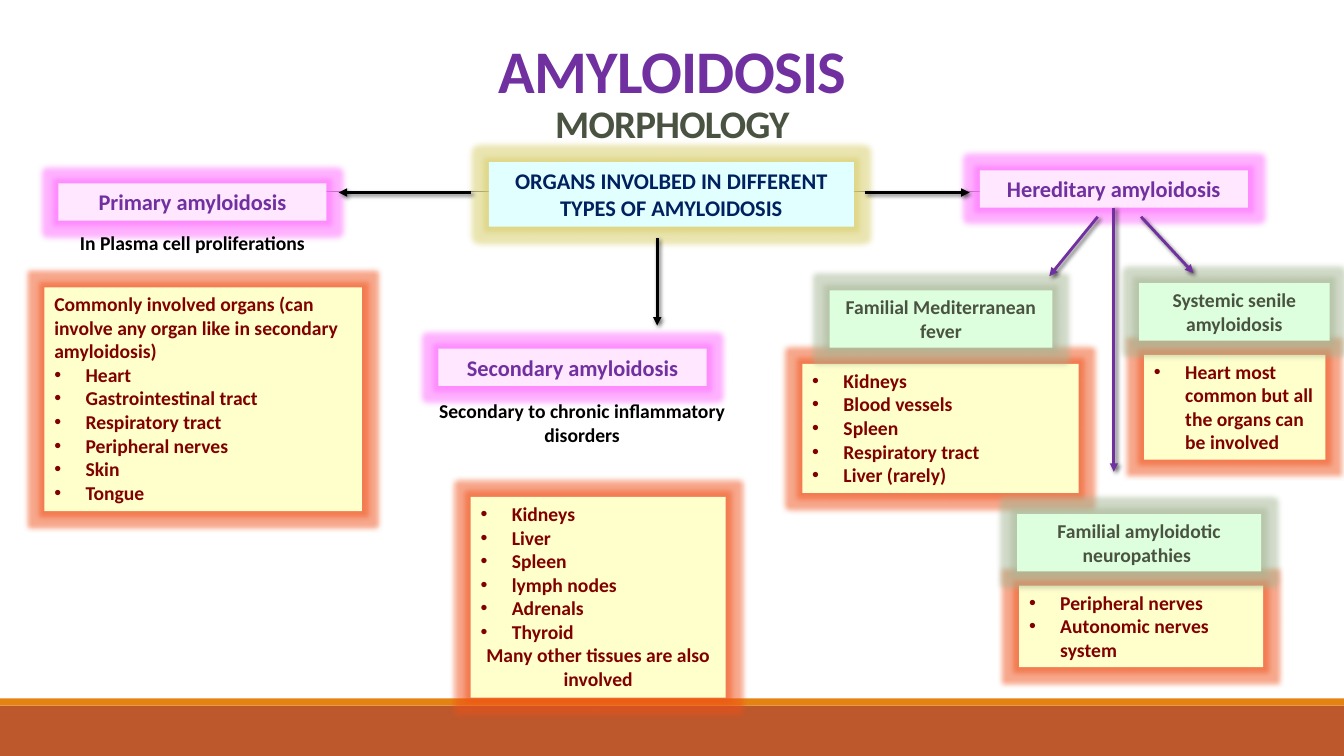
import lxml.etree
import pptx
import pptx.dml.color
import pptx.enum.shapes
import pptx.enum.text
import pptx.oxml.ns
import pptx.util

GRID = pptx.util.Inches(0.1)
COLUMNS, ROWS = 133.33, 75
FONT = "Calibri"
BLACK, PURPLE, MAROON, MOSS, NAVY = "000000", "7030A0", "800000", "4A5242", "002060"
CENTER = pptx.enum.text.PP_ALIGN.CENTER
LEFT = pptx.enum.text.PP_ALIGN.LEFT

STYLES = {
    "topic": {"fill": "E1FFFF", "glow": "D6CB62", "color": NAVY, "size": 16},
    "type": {"fill": "FFE7FF", "glow": "FF66FF", "color": PURPLE, "size": 16},
    "subtype": {"fill": "DDFFDD", "glow": "A3B591", "color": MOSS, "size": 14},
    "organs": {"fill": "FFFFCC", "glow": "F05018", "color": MAROON, "size": 14},
}

ORGAN_LISTS = [
    ((46.7, 49.3, 25.3, 19.9), "",
     ["Kidneys", "Liver", "Spleen", "lymph nodes", "Adrenals", "Thyroid"],
     "Many other tissues are also involved"),
    ((4.4, 28.5, 31.5, 22.2),
     "Commonly involved organs (can involve any organ like in secondary amyloidosis)",
     ["Heart", "Gastrointestinal tract", "Respiratory tract",
      "Peripheral nerves", "Skin", "Tongue"], ""),
    ((79.6, 36.1, 27.4, 12.8), "",
     ["Kidneys", "Blood vessels", "Spleen", "Respiratory tract", "Liver (rarely)"], ""),
    ((101.1, 58.1, 24.2, 8.1), "", ["Peripheral nerves", "Autonomic nerves system"], ""),
    ((113.5, 35.2, 18, 10.4), "",
     ["Heart most common but all the organs can be involved"], ""),
]

HEADINGS = [
    ("topic", (48.5, 16.1, 36.2, 6.4), "ORGANS INVOLBED IN DIFFERENT TYPES OF AMYLOIDOSIS"),
    ("type", (5.8, 18.2, 26.6, 3.7), "Primary amyloidosis"),
    ("type", (43.5, 34.6, 26.6, 3.7), "Secondary amyloidosis"),
    ("type", (97.2, 16.9, 26.6, 3.7), "Hereditary amyloidosis"),
    ("subtype", (82.3, 28.8, 22.1, 5.7), "Familial Mediterranean fever"),
    ("subtype", (100.9, 51, 24.2, 5.7), "Familial amyloidotic neuropathies "),
    ("subtype", (113, 28.1, 18.9, 5.7), "Systemic senile amyloidosis"),
]

CAPTIONS = [
    ((5.8, 22.4, 26.6, 3.4), "In Plasma cell proliferations"),
    ((42.3, 39.1, 30.9, 5.7), "Secondary to chronic inflammatory disorders"),
]

ARROWS = [
    ((46.7, 19.1, 33.6, 19.1), BLACK),
    ((65.2, 23.6, 65.2, 32.3), BLACK),
    ((85.8, 19.1, 96.2, 19.1), BLACK),
    ((108.9, 21.5, 104.1, 27.4), PURPLE),
    ((113.2, 21.5, 118.4, 27.1), PURPLE),
]


def rgb(value):
    return pptx.dml.color.RGBColor.from_string(value)


def on_grid(cells):
    return [round(cell * GRID) for cell in cells]


def add_node(parent, tag, **attributes):
    name = pptx.oxml.ns.qn("a:" + tag)
    return lxml.etree.SubElement(
        parent, name, {key: str(value) for key, value in attributes.items()})


def add_effect(effects, kind, color, alpha, **attributes):
    effect = add_node(effects, kind, **attributes)
    tint = add_node(effect, "srgbClr", val=color)
    add_node(tint, "alpha", val=alpha * 1000)


def add_span(para, text, size, color):
    span = para.add_run()
    span.text = text
    span.font.name = FONT
    span.font.size = pptx.util.Pt(size)
    span.font.bold = True
    span.font.color.rgb = rgb(color)
    return span


def write_paras(box, entries, size, color):
    frame = box.text_frame
    frame.word_wrap = True
    frame.vertical_anchor = pptx.enum.text.MSO_ANCHOR.TOP
    for number, (text, align, bulleted) in enumerate(entries):
        para = frame.add_paragraph() if number else frame.paragraphs[0]
        para.alignment = align
        if bulleted:
            indent = pptx.util.Inches(0.31)
            properties = para._p.get_or_add_pPr()
            properties.set("marL", str(indent))
            properties.set("indent", str(-indent))
            add_node(properties, "buFont", typeface="Arial")
            add_node(properties, "buChar", char="•")
        add_span(para, text, size, color)


def add_block(page, cells, fill):
    box = page.shapes.add_shape(
        pptx.enum.shapes.MSO_SHAPE.RECTANGLE, *on_grid(cells))
    box.fill.solid()
    box.fill.fore_color.rgb = rgb(fill)
    box.line.fill.background()
    box.shadow.inherit = False
    return box


def add_box(page, style, cells, entries):
    look = STYLES[style]
    box = add_block(page, cells, look["fill"])
    effects = box._element.spPr.find(pptx.oxml.ns.qn("a:effectLst"))
    add_effect(effects, "glow", look["glow"], 50, rad=pptx.util.Pt(8))
    write_paras(box, entries, look["size"], look["color"])
    return box


def add_organ_list(page, cells, intro, organs, closing):
    entries = [(intro, LEFT, False)] if intro else []
    entries += [(organ, LEFT, True) for organ in organs]
    entries += [(closing, CENTER, False)] if closing else []
    add_box(page, "organs", cells, entries)


def add_caption(page, cells, text):
    box = page.shapes.add_textbox(*on_grid(cells))
    write_paras(box, [(text, CENTER, False)], 14, BLACK)


def add_line(page, cells, color, width):
    line = page.shapes.add_connector(
        pptx.enum.shapes.MSO_CONNECTOR.STRAIGHT, *on_grid(cells))
    line.line.width = pptx.util.Pt(width)
    line.line.color.rgb = rgb(color)
    return line, add_node(line._element.spPr, "effectLst")


def add_arrow(page, cells, color):
    arrow, effects = add_line(page, cells, color, 2)
    outline = arrow._element.spPr.find(pptx.oxml.ns.qn("a:ln"))
    add_node(outline, "tailEnd", type="triangle")
    add_effect(effects, "outerShdw", BLACK, 60, blurRad=pptx.util.Pt(3),
               dist=pptx.util.Pt(2), dir=45 * 60000, algn="tl", rotWithShape=0)
    return arrow


def add_title(page):
    title = page.shapes.title
    title.left, title.top, title.width, title.height = on_grid((9.2, 3.4, 115, 11.6))
    frame = title.text_frame
    frame.word_wrap = True
    frame.auto_size = pptx.enum.text.MSO_AUTO_SIZE.NONE
    frame.vertical_anchor = pptx.enum.text.MSO_ANCHOR.BOTTOM
    para = frame.paragraphs[0]
    para.alignment = CENTER
    para.line_spacing = 0.85
    subject = add_span(para, "AMYLOIDOSIS", 43.2, PURPLE)
    para.add_line_break()
    aspect = add_span(para, "MORPHOLOGY", 27.9, MOSS)
    for span in (subject, aspect):
        span.font._element.set("spc", "-50")


def main():
    deck = pptx.Presentation()
    deck.slide_width, deck.slide_height = on_grid((COLUMNS, ROWS))
    page = deck.slides.add_slide(deck.slide_layouts[5])
    add_block(page, (0, 70, COLUMNS, 5), "BD582C")
    add_block(page, (0, 69.3, COLUMNS, 0.7), "E48312")
    add_line(page, (13.1, 19, 122.1, 19), "808080", 0.5)
    add_title(page)
    for organ_list in ORGAN_LISTS:
        add_organ_list(page, *organ_list)
    boxes = {text: add_box(page, style, cells, [(text, CENTER, False)])
             for style, cells, text in HEADINGS}
    for caption in CAPTIONS:
        add_caption(page, *caption)
    for arrow in ARROWS:
        add_arrow(page, *arrow)
    neuropathy_arrow = add_arrow(page, (110.5, 20.6, 110.5, 46.8), PURPLE)
    neuropathy_arrow.begin_connect(boxes["Hereditary amyloidosis"], 2)
    deck.save("out.pptx")


if __name__ == "__main__":
    main()
